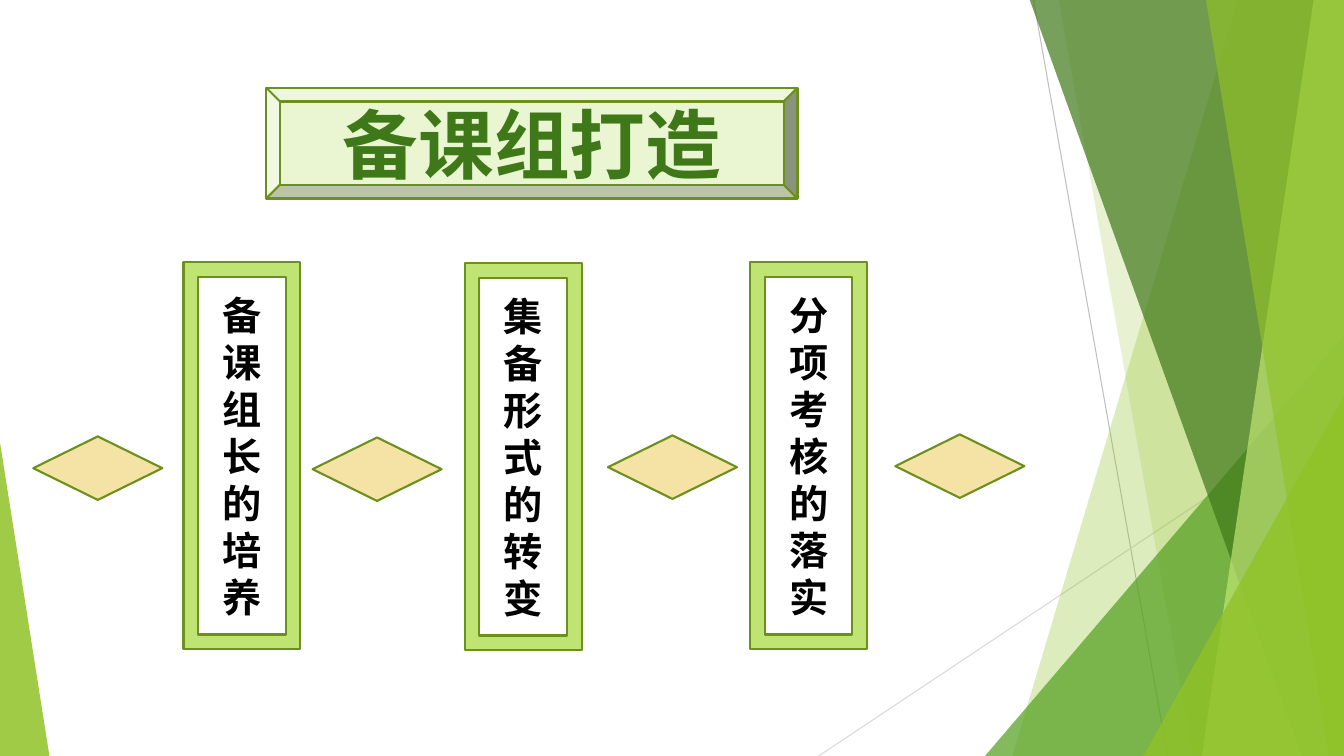
"""Build the lesson-planning group slide."""
from lxml import etree
from pptx import Presentation
from pptx import util as u
from pptx.dml.color import RGBColor
from pptx.enum import shapes, text
from pptx.oxml.ns import qn

THEME = {
    "font": "Lato", "head": 54, "body": 28, "edge": "6B901C",
    "lime": "90C226", "leaf": "54A021", "deep": "3F7819", "pale": "C0E474",
    "mist": "EAF6D1", "sand": "F5E3A5", "ink": "000000",
    "grey": "BFBFBF", "faint": "D9D9D9",
}
WIDE, HIGH, TOP = 13.33, 7.5, -0.01
TITLE = "备课组打造"
STEPS = [("备课组长的培养", 1.82, 2.6), ("集备形式的转变", 4.61, 2.61),
         ("分项考核的落实", 7.44, 2.6)]
GEMS = [(3.1, 4.34), (6.03, 4.32), (8.88, 4.31), (0.33, 4.33)]
RAYS = [((10.25, 0), (11.58, HIGH), "grey"),
        ((WIDE, 4.03), (8.12, HIGH), "faint")]
DECOR = [
    ("band", (12.28, 10.04), "lime", 30),
    ("band", (10.5, 11.83), "lime", 20),
    ("peak", (9.77, 3.33, 3.56, 1), "leaf", 72),
    ("band", (10.21, 12.91), "deep", 70),
    ("band", (13.03, 11.92), "pale", 70),
    ("band", (11.96, 13.18), "lime", 65),
    ("peak", (11.34, 3.93, 1.99, 1), "lime", 80),
    ("peak", (0, 4.39, 0.49, 0), "lime", 85),
]


def tone(key):
    return RGBColor.from_string(THEME[key])


def paint(shape, fill, alpha=None):
    shape.shadow.inherit = False
    shape.fill.solid()
    shape.fill.fore_color.rgb = tone(fill)
    if alpha is None:
        shape.line.color.rgb = tone("edge")
        shape.line.width = u.Pt(1.5)
    else:
        shape.line.fill.background()
        clr = shape.fill._xPr.find(qn("a:solidFill"))[0]
        etree.SubElement(clr, qn("a:alpha")).set("val", str(alpha * 1000))


def put(slide, kind, box):
    return slide.shapes.add_shape(kind, *map(u.Inches, box))


def band(slide, head, foot):
    pts = [(head, TOP), (WIDE, TOP), (WIDE, HIGH), (foot, HIGH)]
    pts = [(u.Inches(x), u.Inches(y)) for x, y in pts]
    pen = slide.shapes.build_freeform(*pts[0])
    pen.add_line_segments(pts[1:], close=True)
    return pen.convert_to_shape()


def peak(slide, left, top, width, tip):
    shape = put(slide, shapes.MSO_SHAPE.ISOSCELES_TRIANGLE,
                (left, top, width, HIGH - top))
    shape.adjustments[0] = tip
    return shape


def ray(slide, start, end, key):
    line = slide.shapes.add_connector(
        shapes.MSO_CONNECTOR.STRAIGHT, *map(u.Inches, start + end))
    line.line.color.rgb = tone(key)
    line.line.width = u.Pt(0.75)
    etree.SubElement(line._element.spPr, qn("a:effectLst"))


def label(shape, words, size, key):
    frame = shape.text_frame
    frame.text = words
    frame.word_wrap = True
    frame.vertical_anchor = text.MSO_ANCHOR.MIDDLE
    para = frame.paragraphs[0]
    para.alignment = text.PP_ALIGN.CENTER
    font = para.runs[0].font
    font.name, font.size, font.bold = THEME["font"], u.Pt(THEME[size]), True
    font.color.rgb = tone(key)


def main():
    deck = Presentation()
    deck.slide_width, deck.slide_height = u.Inches(WIDE), u.Inches(HIGH)
    slide = deck.slides.add_slide(deck.slide_layouts[6])
    for start, end, key in RAYS:
        ray(slide, start, end, key)
    draw = {"band": band, "peak": peak}
    for kind, spots, key, alpha in DECOR:
        paint(draw[kind](slide, *spots), key, alpha)

    title = put(slide, shapes.MSO_SHAPE.BEVEL, (2.64, 0.87, 5.27, 1.1))
    paint(title, "mist")
    label(title, TITLE, "head", "deep")
    for words, left, top in STEPS:
        step = put(slide, shapes.MSO_SHAPE.FRAME, (left, top, 1.16, 3.84))
        paint(step, "pale")
        label(step, words, "body", "ink")
    for left, top in GEMS:
        gem = put(slide, shapes.MSO_SHAPE.FLOWCHART_DECISION,
                  (left, top, 1.28, 0.63))
        paint(gem, "sand")
    deck.save("out.pptx")


if __name__ == "__main__":
    main()
